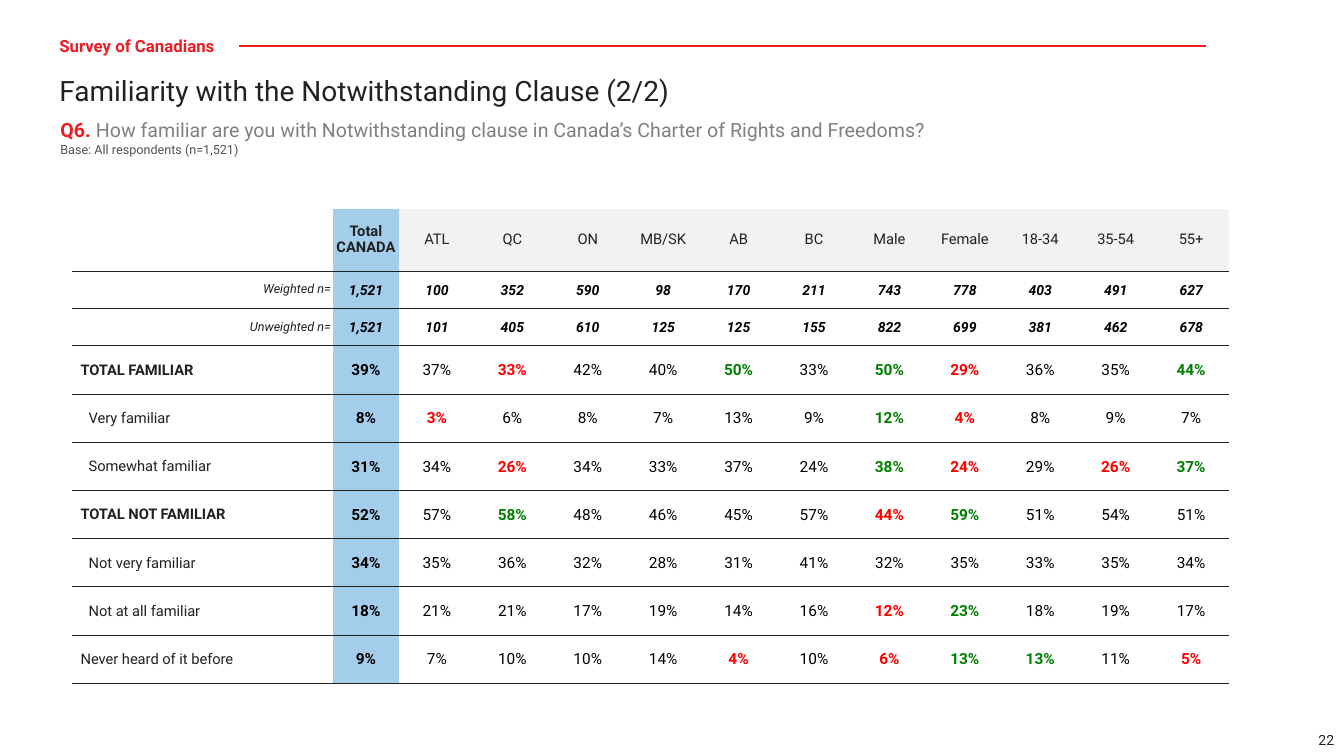
from pptx import Presentation
from pptx.dml.color import RGBColor
from pptx.enum.shapes import MSO_CONNECTOR
from pptx.enum.text import MSO_ANCHOR, MSO_AUTO_SIZE as AutoSize, PP_ALIGN as Align
from pptx.oxml.ns import qn
from pptx.util import Inches, Pt
from lxml.etree import SubElement

COLORS = {
    "red": "ED1C24", "dark": "212121", "black": "000000", "white": "FFFFFF",
    "question": "808080", "base": "515156", "total": "A4CDEB", "header": "F2F2F2",
    "lower": "FF0000", "higher": "008000",
}
NO_STYLE_NO_GRID = "{2D5ABB26-0587-4C30-8999-92F81FD0307C}"


def add_run(paragraph, text, size, color, bold=False, italic=False):
    run = paragraph.add_run()
    run.text = text
    run.font.name = "Roboto"
    run.font.size = Pt(size)
    run.font.bold = bold
    run.font.italic = italic
    run.font.color.rgb = RGBColor.from_string(COLORS[color])


def add_text_box(left, top, width, height):
    box = slide.shapes.add_textbox(Inches(left), Inches(top), Inches(width), Inches(height))
    box.text_frame.word_wrap = True
    return box


presentation = Presentation()
presentation.slide_width = Inches(13.33)
presentation.slide_height = Inches(7.5)
slide = presentation.slides.add_slide(presentation.slide_layouts[6])

# Red rule behind the section title
rule = slide.shapes.add_connector(
    MSO_CONNECTOR.STRAIGHT, Inches(0.9), Inches(0.46), Inches(11.96), Inches(0.46))
rule.line.color.rgb = RGBColor.from_string(COLORS["red"])
rule.line.width = Pt(1.5)
SubElement(rule._element.spPr, qn("a:effectLst"))

# Page number
page_number = add_text_box(12.09, 7.18, 1.24, 0.32)
page_number.text_frame.vertical_anchor = MSO_ANCHOR.MIDDLE
paragraph = page_number.text_frame.paragraphs[0]
paragraph.alignment = Align.RIGHT
add_run(paragraph, "22", 10, "dark")

# Table content: a trailing + or - marks a significantly higher or lower value
headers = ["ATL", "QC", "ON", "MB/SK", "AB", "BC", "Male", "Female", "18-34", "35-54", "55+"]
sample_rows = [
    ("Weighted n=", "1,521 100 352 590 98 170 211 743 778 403 491 627"),
    ("Unweighted n=", "1,521 101 405 610 125 125 155 822 699 381 462 678"),
]
# Label, indent, bold label, percentages
answer_rows = [
    ("TOTAL FAMILIAR", 0.08, True, "39 37 33- 42 40 50+ 33 50+ 29- 36 35 44+"),
    ("Very familiar", 0.16, False, "8 3- 6 8 7 13 9 12+ 4- 8 9 7"),
    ("Somewhat familiar", 0.16, False, "31 34 26- 34 33 37 24 38+ 24- 29 26- 37+"),
    ("TOTAL NOT FAMILIAR", 0.08, True, "52 57 58+ 48 46 45 57 44- 59+ 51 54 51"),
    ("Not very familiar", 0.16, False, "34 35 36 32 28 31 41 32 35 33 35 34"),
    ("Not at all familiar", 0.16, False, "18 21 21 17 19 14 16 12- 23+ 18 19 17"),
    ("Never heard of it before", 0.08, False, "9 7 10 10 14 4- 10 6- 13+ 13+ 11 5-"),
]
row_heights = [Inches(0.62)] + [Inches(0.37)] * 2 + [Inches(3.35) // 7] * 7
column_widths = [Inches(2.59), Inches(0.66)] + [Inches(8.23) // 11] * 11

# Table frame
table = slide.shapes.add_table(
    len(row_heights), len(column_widths), Inches(0.71), Inches(2.07),
    sum(column_widths), sum(row_heights)).table
table.first_row = False
table.horz_banding = False
table._tbl.tblPr.find(qn("a:tableStyleId")).text = NO_STYLE_NO_GRID
for row, height in zip(table.rows, row_heights):
    row.height = height
for column, width in zip(table.columns, column_widths):
    column.width = width

# Cell borders, fills and margins
for row_index in range(len(row_heights)):
    for column_index in range(len(column_widths)):
        cell = table.cell(row_index, column_index)
        cell.vertical_anchor = MSO_ANCHOR.MIDDLE
        properties = cell._tc.get_or_add_tcPr()
        for side in ("L", "R", "T", "B"):
            border = SubElement(properties, qn(f"a:ln{side}"), w=str(Pt(0.5)))
            if side == "B" or (side == "T" and row_index > 0):
                solid = SubElement(border, qn("a:solidFill"))
                SubElement(solid, qn("a:srgbClr"), val=COLORS["dark"])
            else:
                SubElement(border, qn("a:noFill"))

        fill_name = "total" if column_index == 1 else "header" if row_index == 0 else None
        if row_index > 2 and answer_rows[row_index - 3][2] and not fill_name:
            fill_name = "white"
        if fill_name and (row_index, column_index) != (0, 0):
            cell.fill.solid()
            cell.fill.fore_color.rgb = RGBColor.from_string(COLORS[fill_name])
        else:
            cell.fill.background()

        if row_index == 0:
            margins = (0, 0, 0, 0)
        elif column_index > 0:
            margins = (0.01, 0.01, 0.01, 0)
        elif row_index < 3:
            margins = (0.02, 0.02, 0.02, 0.02)
        else:
            margins = (0.01, 0.01, 0.1, 0)
        (cell.margin_left, cell.margin_top,
         cell.margin_right, cell.margin_bottom) = map(Inches, margins)
        if column_index > 0:
            cell.text_frame.paragraphs[0].alignment = Align.CENTER

# Header row
total_frame = table.cell(0, 1).text_frame
for paragraph, word in zip((total_frame.paragraphs[0], total_frame.add_paragraph()),
                           ("Total", "CANADA")):
    paragraph.alignment = Align.CENTER
    paragraph.line_spacing = 0.9
    add_run(paragraph, word, 10.5, "dark", bold=True)
for column_index, header in enumerate(headers, start=2):
    add_run(table.cell(0, column_index).text_frame.paragraphs[0], header, 10.5, "dark")

# Sample size rows
for row_index, (label, counts) in enumerate(sample_rows, start=1):
    paragraph = table.cell(row_index, 0).text_frame.paragraphs[0]
    paragraph.alignment = Align.RIGHT
    paragraph.line_spacing = 0.9
    add_run(paragraph, label, 9, "dark", italic=True)
    for column_index, count in enumerate(counts.split(), start=1):
        paragraph = table.cell(row_index, column_index).text_frame.paragraphs[0]
        add_run(paragraph, count, 10, "black", bold=True, italic=True)

# Answer rows
for row_index, (label, indent, bold, values) in enumerate(answer_rows, start=3):
    paragraph = table.cell(row_index, 0).text_frame.paragraphs[0]
    paragraph._p.get_or_add_pPr().set("marL", str(Inches(indent)))
    add_run(paragraph, label, 10.5, "dark", bold=bold)
    for column_index, value in enumerate(values.split(), start=1):
        color = {"+": "higher", "-": "lower"}.get(value[-1], "black")
        paragraph = table.cell(row_index, column_index).text_frame.paragraphs[0]
        add_run(paragraph, value.rstrip("+-") + "%", 11, color,
                bold=column_index == 1 or color != "black")

# Section title
section = add_text_box(0.49, 0.33, 1.88, 0.28)
section.fill.solid()
section.fill.fore_color.rgb = RGBColor.from_string(COLORS["white"])
section.text_frame.auto_size = AutoSize.SHAPE_TO_FIT_TEXT
paragraph = section.text_frame.paragraphs[0]
paragraph.line_spacing = 0.9
add_run(paragraph, "Survey of Canadians", 12, "red", bold=True)

# Question and base
question = add_text_box(0.5, 1.12, 12.25, 0.72)
question.text_frame.auto_size = AutoSize.SHAPE_TO_FIT_TEXT
paragraph = question.text_frame.paragraphs[0]
add_run(paragraph, "Q6. ", 14, "red", bold=True)
add_run(paragraph, "How familiar are you with Notwithstanding clause in Canada’s Charter "
        "of Rights and Freedoms?", 14, "question")
add_run(question.text_frame.add_paragraph(), "Base: All respondents (n=1,521)", 9, "base")

# Headline
headline = add_text_box(0.49, 0.72, 11.47, 0.39)
paragraph = headline.text_frame.paragraphs[0]
paragraph.line_spacing = 0.9
add_run(paragraph, "Familiarity with the Notwithstanding Clause (2/2)", 20, "dark")

presentation.save("out.pptx")
